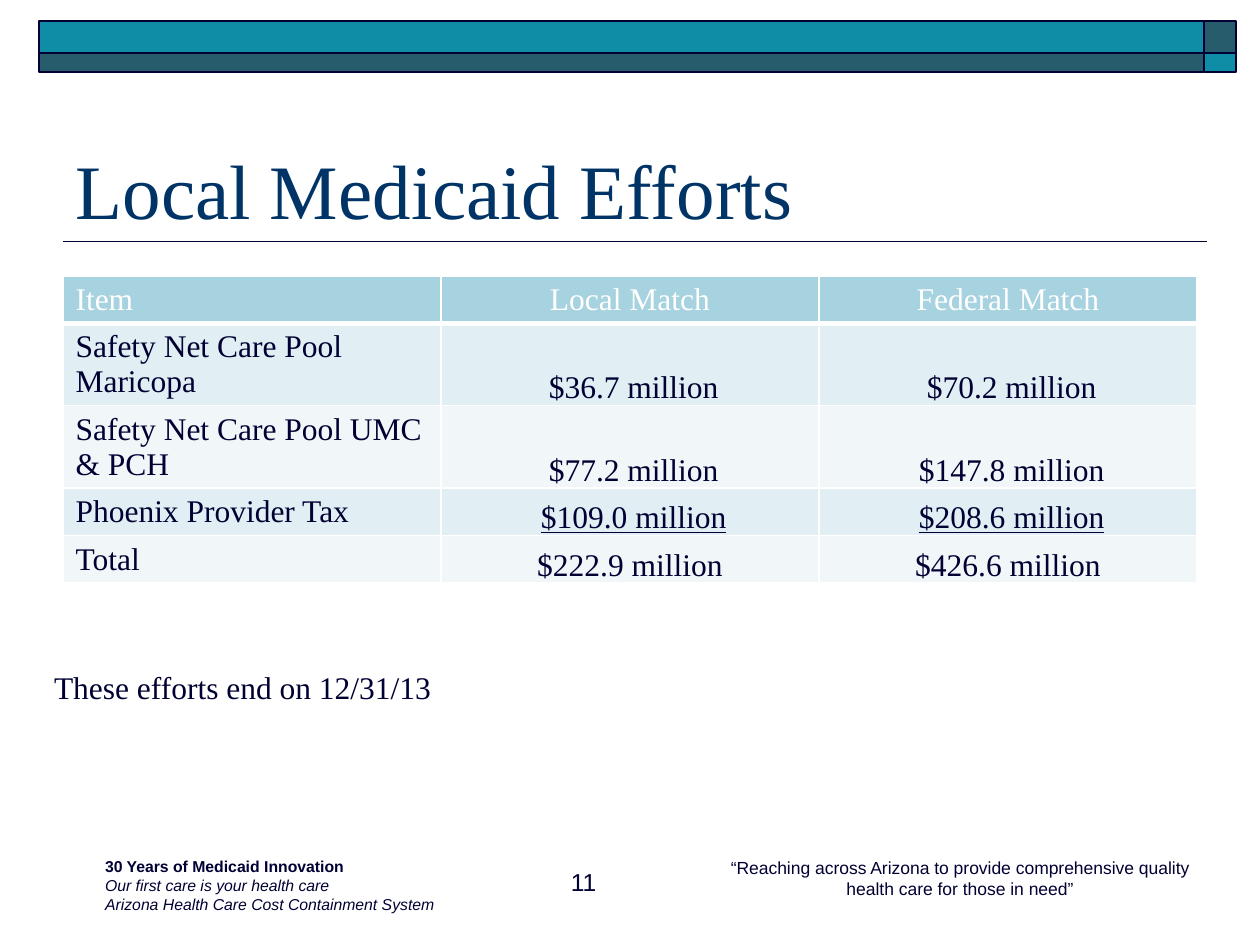
from dataclasses import dataclass
from itertools import product

from lxml.etree import SubElement
from pptx import Presentation
from pptx.dml.color import RGBColor
from pptx.enum.shapes import MSO_CONNECTOR, MSO_SHAPE
from pptx.enum.text import MSO_ANCHOR, MSO_AUTO_SIZE, PP_ALIGN
from pptx.oxml.ns import qn
from pptx.util import Cm, Pt


@dataclass(frozen=True)
class Theme:
    ink: str = "000033"
    title: str = "003366"
    teal: str = "108DA6"
    slate: str = "275C6D"
    white: str = "FFFFFF"
    header: str = "A7D2DF"
    bands: tuple = ("E1EEF3", "F1F7F9")
    serif: str = "Times New Roman"
    sans: str = "Arial"
    title_size: float = 44
    body_size: float = 18
    number_size: float = 14
    motto_size: float = 10
    footer_size: float = 9


def write(p, text, *, font, size, color, align=PP_ALIGN.LEFT,
          bold=False, italic=False, underline=False):
    """Add one formatted run to a paragraph."""
    p.alignment = align
    r = p.add_run()
    r.text = text
    f = r.font
    f.name, f.size = font, Pt(size)
    f.bold, f.italic, f.underline = bold, italic, underline
    f.color.rgb = RGBColor.from_string(color)


class SlideBuilder:
    def __init__(self, prs, theme):
        self.t = theme
        self.s = prs.slides.add_slide(prs.slide_layouts[5])

    def title(self, text, *box):
        sp = self.s.shapes.title
        sp.left, sp.top, sp.width, sp.height = map(Cm, box)
        tf = sp.text_frame
        tf.auto_size = MSO_AUTO_SIZE.NONE
        tf.vertical_anchor = MSO_ANCHOR.BOTTOM
        write(tf.paragraphs[0], text, font=self.t.serif,
              size=self.t.title_size, color=self.t.title)

    def bar(self, color, *box):
        sp = self.s.shapes.add_shape(MSO_SHAPE.RECTANGLE, *map(Cm, box))
        sp.shadow.inherit = False
        sp.fill.solid()
        sp.fill.fore_color.rgb = RGBColor.from_string(color)
        sp.line.color.rgb = RGBColor.from_string(self.t.ink)
        sp.line.width = Pt(1)

    def rule(self, x1, x2, y):
        ln = self.s.shapes.add_connector(
            MSO_CONNECTOR.STRAIGHT, Cm(x1), Cm(y), Cm(x2), Cm(y))
        ln.line.color.rgb = RGBColor.from_string(self.t.ink)
        ln.line.width = Pt(1)
        SubElement(ln._element.spPr, qn("a:effectLst"))

    def text(self, lines, *box, indent=0.25, **fmt):
        """Each line is a pair of its text and its own extra format."""
        tf = self.s.shapes.add_textbox(*map(Cm, box)).text_frame
        tf.word_wrap = True
        tf.margin_left = Cm(indent)
        for i, (line, extra) in enumerate(lines):
            p = tf.add_paragraph() if i else tf.paragraphs[0]
            write(p, line, color=self.t.ink, **fmt, **extra)

    def border(self, cell, bottom):
        tcPr = cell._tc.get_or_add_tcPr()
        for side in "LRTB":
            width = bottom if side == "B" else 1
            ln = SubElement(tcPr, qn(f"a:ln{side}"), w=str(Pt(width)))
            fill = SubElement(ln, qn("a:solidFill"))
            SubElement(fill, qn("a:srgbClr"), val=self.t.white)

    def table(self, rows, heights, *box):
        t = self.t
        tbl = self.s.shapes.add_table(len(rows), len(rows[0]), *map(Cm, box)).table
        for row, height in zip(tbl.rows, heights):
            row.height = Cm(height)
        last = len(rows) - 1
        for i, j in product(range(len(rows)), range(len(rows[0]))):
            cell, head = tbl.cell(i, j), i == 0
            self.border(cell, 3 if head else 1)
            cell.fill.solid()
            cell.fill.fore_color.rgb = RGBColor.from_string(
                t.header if head else t.bands[(i - 1) % 2])
            amount = j > 0 and not head
            if amount:
                cell.vertical_anchor = MSO_ANCHOR.BOTTOM
                cell.margin_left = Cm(0.03 if i == last else 0.18)
                cell.margin_top = cell.margin_right = Cm(0.03)
                cell.margin_bottom = 0
            # The amounts above the total are underlined
            write(cell.text_frame.paragraphs[0], rows[i][j], font=t.serif,
                  size=t.body_size, color=t.white if head else t.ink,
                  align=PP_ALIGN.CENTER if j else PP_ALIGN.LEFT,
                  underline=amount and i == last - 1)


def main():
    prs = Presentation()
    prs.slide_width, prs.slide_height = Cm(25.4), Cm(19.05)
    t = Theme()
    b = SlideBuilder(prs, t)

    # Header band and rule under the title
    b.rule(1.27, 24.33, 4.87)
    columns = ((0.79, 23.49), (24.28, 0.64))
    bands = ((0.43, 0.64), (1.07, 0.38))
    for (i, (x, w)), (j, (y, h)) in product(enumerate(columns), enumerate(bands)):
        b.bar(t.teal if i == j else t.slate, x, y, w, h)

    # Title
    b.title("Local Medicaid Efforts", 1.27, 1.7, 22.86, 3.17)

    # Matching funds
    b.table([
        ("Item", "Local Match", "Federal Match"),
        ("Safety Net Care Pool Maricopa", "$36.7 million", "$70.2 million"),
        ("Safety Net Care Pool UMC & PCH", "$77.2 million", "$147.8 million"),
        ("Phoenix Provider Tax", "$109.0 million", "$208.6 million"),
        ("Total", "$222.9 million", "$426.6 million"),
    ], (0.81, 1.55, 1.55, 0.89, 0.89), 1.27, 5.56, 22.86, 5.69)
    b.text([("These efforts end on 12/31/13", {})], 0.84, 13.34, 17.15, 1.02,
           font=t.serif, size=t.body_size)

    # Footer: agency, page number and motto
    b.text([
        ("30 Years of Medicaid Innovation", {"bold": True}),
        ("Our first care is your health care", {"italic": True}),
        ("Arizona Health Care Cost Containment System", {"italic": True}),
    ], 0.64, 17.15, 23.7, 1.32, indent=1.48, font=t.sans, size=t.footer_size)
    b.text([("11", {})], 11, 17.35, 1.27, 1.02,
           font=t.sans, size=t.number_size, align=PP_ALIGN.RIGHT)
    b.text([("“Reaching across Arizona to provide comprehensive quality "
             "health care for those in need”", {})], 14.17, 17.15, 10.36, 1.09,
           font=t.sans, size=t.motto_size, align=PP_ALIGN.CENTER)

    prs.save("out.pptx")


if __name__ == "__main__":
    main()
